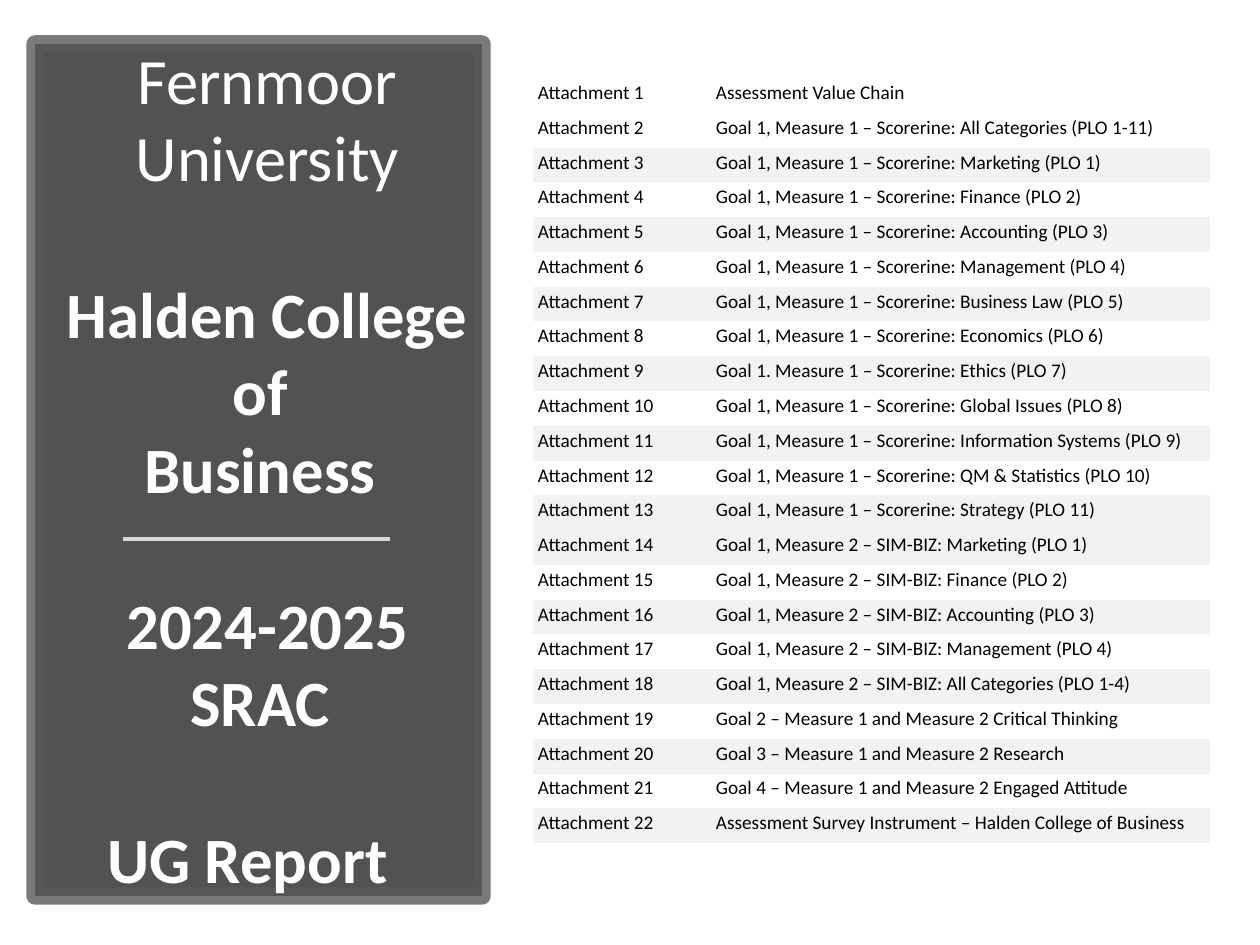
"""Build the attachment index slide for the college assessment report."""
from lxml import etree
from pptx import Presentation
from pptx import util as u
from pptx.dml.color import RGBColor
from pptx.enum import shapes, text
from pptx.oxml.ns import qn

SCALE = 914400 // 126
FONT = "Calibri"
NO_STYLE = "{2D5ABB26-0587-4C30-8999-92F81FD0307C}"
TITLE_SIZE = 36.9
LINE_GAP = 45
TITLE_BLOCKS = [
    ("Fernmoor\vUniversity", False, 0),
    ("Halden College of \vBusiness ", True, LINE_GAP),
    ("2024-2025\vSRAC ", True, LINE_GAP),
    ("UG Report", True, LINE_GAP),
]
EXAM_TOPICS = [
    "All Categories (PLO 1-11)", "Marketing (PLO 1)", "Finance (PLO 2)",
    "Accounting (PLO 3)", "Management (PLO 4)", "Business Law (PLO 5)",
    "Economics (PLO 6)", "Ethics (PLO 7)", "Global Issues (PLO 8)",
    "Information Systems (PLO 9)", "QM & Statistics (PLO 10)", "Strategy (PLO 11)",
]
SIMULATION_TOPICS = [
    "Marketing (PLO 1)", "Finance (PLO 2)", "Accounting (PLO 3)",
    "Management (PLO 4)", "All Categories (PLO 1-4)",
]
GOALS = [(2, "Critical Thinking"), (3, "Research"), (4, "Engaged Attitude")]


def px(length):
    """Turn pixels into EMU."""
    return u.Emu(length * SCALE)


def colour(code):
    """Turn a hex string into a colour."""
    return RGBColor.from_string(code)


def set_alpha(fill_parent, percent):
    """Make the solid fill under an element partly transparent."""
    solid = fill_parent.find(qn("a:solidFill"))
    etree.SubElement(solid[0], qn("a:alpha")).set("val", str(percent * 1000))


def format_runs(para, size, code, bold=False):
    """Give every run of a paragraph the slide font."""
    for span in para.runs:
        span.font.name = FONT
        span.font.size = u.Pt(size)
        span.font.bold = bold
        span.font.color.rgb = colour(code)


def set_insets(target, left, top, right, bottom):
    """Set the inner margins of a text frame or a cell."""
    target.margin_left, target.margin_top = px(left), px(top)
    target.margin_right, target.margin_bottom = px(right), px(bottom)


def add_panel(page, left, top, width, height):
    """Add the dark framed panel behind the title."""
    panel = page.shapes.add_shape(
        shapes.MSO_SHAPE.RECTANGLE, px(left), px(top), px(width), px(height))
    panel.shadow.inherit = False
    panel.fill.solid()
    panel.fill.fore_color.rgb = colour("404040")
    panel.line.color.rgb = colour("595959")
    panel.line.width = u.Pt(10)
    properties = panel._element.spPr
    outline = properties.find(qn("a:ln"))
    set_alpha(properties, 90)
    set_alpha(outline, 80)
    etree.SubElement(outline, qn("a:round"))


def add_rule(page, left, right, top):
    """Add the thin horizontal rule on the panel."""
    rule = page.shapes.add_connector(
        shapes.MSO_CONNECTOR.STRAIGHT, px(left), px(top), px(right), px(top))
    rule.line.color.rgb = colour("D9D9D9")
    rule.line.width = u.Pt(1.75)
    etree.SubElement(rule._element.spPr, qn("a:effectLst"))


def fill_title(page, left, top, width, height):
    """Write the title blocks into the placeholder and bring it to the front."""
    box = page.shapes.title
    box.left, box.top, box.width, box.height = map(px, (left, top, width, height))
    frame = box.text_frame
    frame.word_wrap = True
    frame.auto_size = text.MSO_AUTO_SIZE.NONE
    frame.vertical_anchor = text.MSO_ANCHOR.MIDDLE
    set_insets(frame, 12, 0, 12, 68)
    for index, (words, bold, gap) in enumerate(TITLE_BLOCKS):
        para = frame.add_paragraph() if index else frame.paragraphs[0]
        para.text = words
        para.alignment = text.PP_ALIGN.CENTER
        para.line_spacing = 1.0
        para.space_before = u.Pt(gap)
        format_runs(para, TITLE_SIZE, "FFFFFF", bold)
    para._p.get_or_add_pPr().set("marR", str(px(40)))
    page.shapes._spTree.append(box._element)


def attachment_names():
    """List the attachment descriptions in order."""
    exams = [f"Goal 1{'.' if 'Ethics' in topic else ','} Measure 1 – Scorerine: {topic}"
             for topic in EXAM_TOPICS]
    simulations = [f"Goal 1, Measure 2 – SIM-BIZ: {topic}" for topic in SIMULATION_TOPICS]
    goals = [f"Goal {goal} – Measure 1 and Measure 2 {topic}" for goal, topic in GOALS]
    return ["Assessment Value Chain", *exams, *simulations, *goals,
            "Assessment Survey Instrument – Halden College of Business"]


def is_shaded(number):
    """Shade odd rows from 3 to 13 and even rows from 14 on."""
    return number % 2 == 0 if number >= 14 else number >= 3 and number % 2 == 1


def fill_cell(cell, words, number):
    """Write and format one table cell."""
    cell.text = words
    format_runs(cell.text_frame.paragraphs[0], 11, "000000")
    first = number == 1
    set_insets(cell, 5, 8 if first else 3, 3, 8)
    cell.vertical_anchor = text.MSO_ANCHOR.BOTTOM if first else text.MSO_ANCHOR.TOP
    if is_shaded(number):
        cell.fill.solid()
        cell.fill.fore_color.rgb = colour("F2F2F2")
    else:
        cell.fill.background()


def add_attachments(page, left, top, widths, height):
    """Add the numbered attachment table."""
    names = attachment_names()
    special_rows = {1: 37, 7: 34}
    row_height = px(height - sum(special_rows.values())) // (len(names) - len(special_rows))
    table = page.shapes.add_table(
        len(names), len(widths), px(left), px(top), px(sum(widths)), px(height)).table
    table.first_row = table.horz_banding = False
    table._tbl.tblPr.find(qn("a:tableStyleId")).text = NO_STYLE
    for column, width in zip(table.columns, widths):
        column.width = px(width)
    for number, (row, name) in enumerate(zip(table.rows, names), 1):
        row.height = px(special_rows[number]) if number in special_rows else u.Emu(row_height)
        for cell, words in zip(row.cells, (f"Attachment {number}", name)):
            fill_cell(cell, words, number)


def main():
    """Build and save the deck."""
    deck = Presentation()
    deck.slide_width, deck.slide_height = px(1260), px(945)
    page = deck.slides.add_slide(deck.slide_layouts[5])
    add_panel(page, 35, 44, 447, 852)
    add_rule(page, 123, 390, 539)
    add_attachments(page, 533, 73, (178, 499), 762)
    fill_title(page, 50, 103, 435, 798)
    deck.save("out.pptx")


if __name__ == "__main__":
    main()
